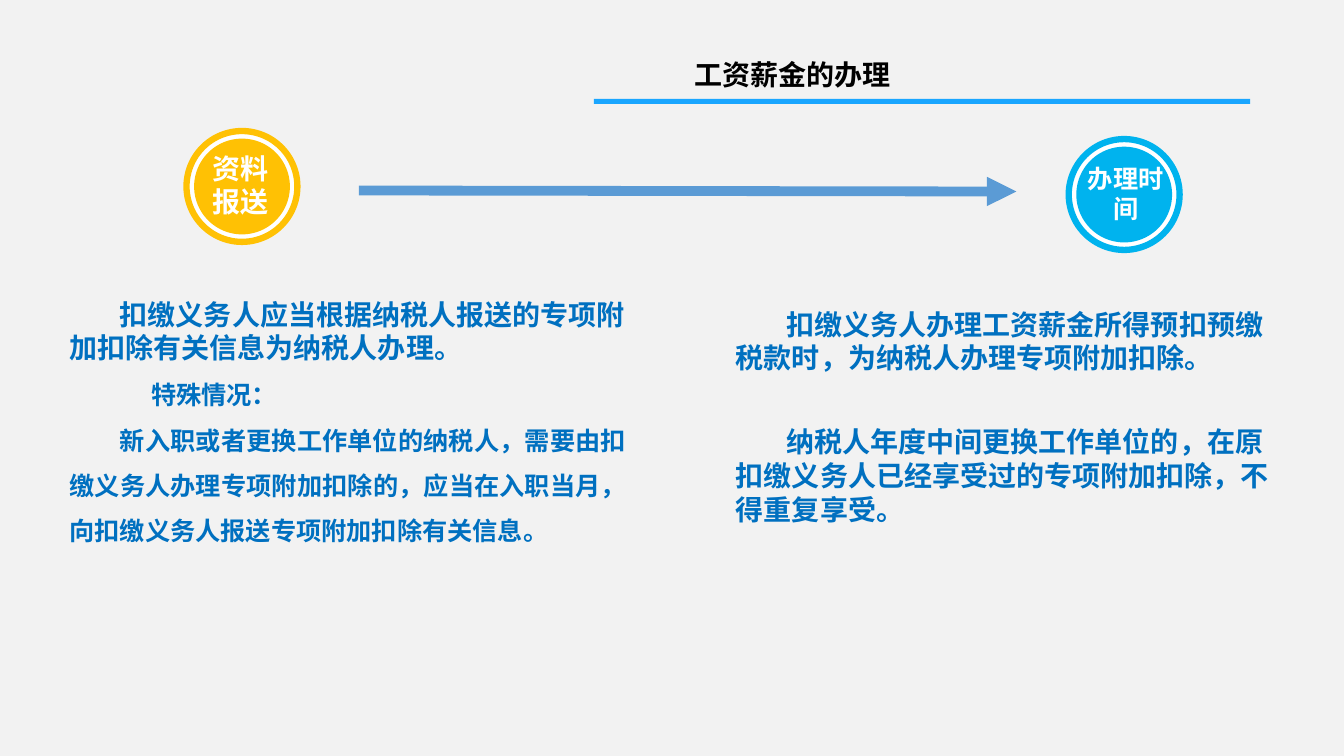
import pptx
import pptx.util
import pptx.dml.color
import pptx.enum.shapes
import pptx.enum.text
import pptx.oxml.ns
from lxml import etree

Inches, Pt = pptx.util.Inches, pptx.util.Pt
SHAPE = pptx.enum.shapes.MSO_SHAPE
ALIGN = pptx.enum.text.PP_ALIGN
qn = pptx.oxml.ns.qn

# Content
TITLE = "工资薪金的办理"
# label, left, top, colour, size, label box
BADGES = [
    ("资料报送", 1.85, 1.3, "gold", "large", (1.93, 1.45, 0.91, 0.77)),
    ("办理时间", 10.6, 1.38, "cyan", "small", (10.69, 1.57, 0.95, 0.71)),
]
# text, size, paragraph settings
FILING = [
    ("扣缴义务人应当根据纳税人报送的专项附加扣除有关信息为纳税人办理。", "large", {}),
    ("特殊情况：", "small", dict(indent=0.81, spacing=1.5, align=ALIGN.JUSTIFY)),
    ("新入职或者更换工作单位的纳税人，需要由扣缴义务人办理专项附加扣除的，"
     "应当在入职当月，向扣缴义务人报送专项附加扣除有关信息。",
     "small", dict(spacing=1.5, align=ALIGN.JUSTIFY)),
]
TIMING = [
    ("扣缴义务人办理工资薪金所得预扣预缴税款时，为纳税人办理专项附加扣除。",
     "large", dict(after=36)),
    ("纳税人年度中间更换工作单位的，在原扣缴义务人已经享受过的专项附加扣除，不得重复享受。",
     "large", dict(after=6)),
]
COLUMNS = [((0.59, 2.9, 5.72, 2.92), FILING), ((7.2, 3, 5.62, 2.27), TIMING)]

THEME = {
    "color": {"back": "F2F2F2", "rule": "1AA6FF", "arrow": "5B9BD5", "gold": "FFC104",
              "cyan": "00B3EE", "body": "0070C0", "white": "FFFFFF", "title": "000000"},
    "size": {"large": 20, "small": 18},
    "font": "Noto Sans CJK SC",
    "title_font": "Arial",
}
RING, DISC = 1.1, 0.95


def rgb(name):
    return pptx.dml.color.RGBColor.from_string(THEME["color"][name])


def add_filled(kind, box, fill, line=None):
    sp = s.shapes.add_shape(kind, *map(Inches, box))
    sp.shadow.inherit = False
    sp.fill.solid()
    sp.fill.fore_color.rgb = rgb(fill)
    if line:
        sp.line.color.rgb = rgb(line)
        sp.line.width = Pt(4.5)
    else:
        sp.line.fill.background()


def add_text(box, items, color, font=THEME["font"]):
    tf = s.shapes.add_textbox(*map(Inches, box)).text_frame
    tf.word_wrap = True
    for i, (text, size, style) in enumerate(items):
        p = tf.add_paragraph() if i else tf.paragraphs[0]
        p.text = text
        p.alignment = style.get("align", ALIGN.LEFT)
        p.line_spacing = style.get("spacing")
        p.space_after = Pt(style.get("after", 0))
        p._p.get_or_add_pPr().set("indent", str(Inches(style.get("indent", 0))))
        r = p.runs[0]
        r.font.name, r.font.bold = font, True
        r.font.size = Pt(THEME["size"][size])
        r.font.color.rgb = rgb(color)
        etree.SubElement(r.font._element, qn("a:ea"), typeface=THEME["font"])


prs = pptx.Presentation()
prs.slide_width, prs.slide_height = Inches(13.33), Inches(7.5)
s = prs.slides.add_slide(prs.slide_layouts[6])
s.background.fill.solid()
s.background.fill.fore_color.rgb = rgb("back")

# Title and rule
add_filled(SHAPE.RECTANGLE, (5.89, 0.98, 6.51, 0.05), "rule")
add_text((6.79, 0.52, 4.94, 0.43), [(TITLE, "large", {})], "title", THEME["title_font"])

# Arrow between the badges
arrow = s.shapes.add_connector(pptx.enum.shapes.MSO_CONNECTOR.STRAIGHT,
                               Inches(3.56), Inches(1.89), Inches(10.08), Inches(1.9))
arrow.line.color.rgb = rgb("arrow")
arrow.line.width = Pt(7)
etree.SubElement(arrow.line._get_or_add_ln(), qn("a:tailEnd"), type="triangle")
etree.SubElement(arrow._element.spPr, qn("a:effectLst"))

# Badges: outlined ring, inner disc, label
inset = (RING - DISC) / 2
for label, left, top, color, size, label_box in BADGES:
    add_filled(SHAPE.OVAL, (left, top, RING, RING), "white", color)
    add_filled(SHAPE.OVAL, (left + inset, top + inset, DISC, DISC), color)
    add_text(label_box, [(label, size, dict(align=ALIGN.CENTER))], "white")

# Body columns, first lines indented
for box, items in COLUMNS:
    add_text(box, [(t, z, {"indent": 0.5, **style}) for t, z, style in items], "body")

prs.save("out.pptx")
